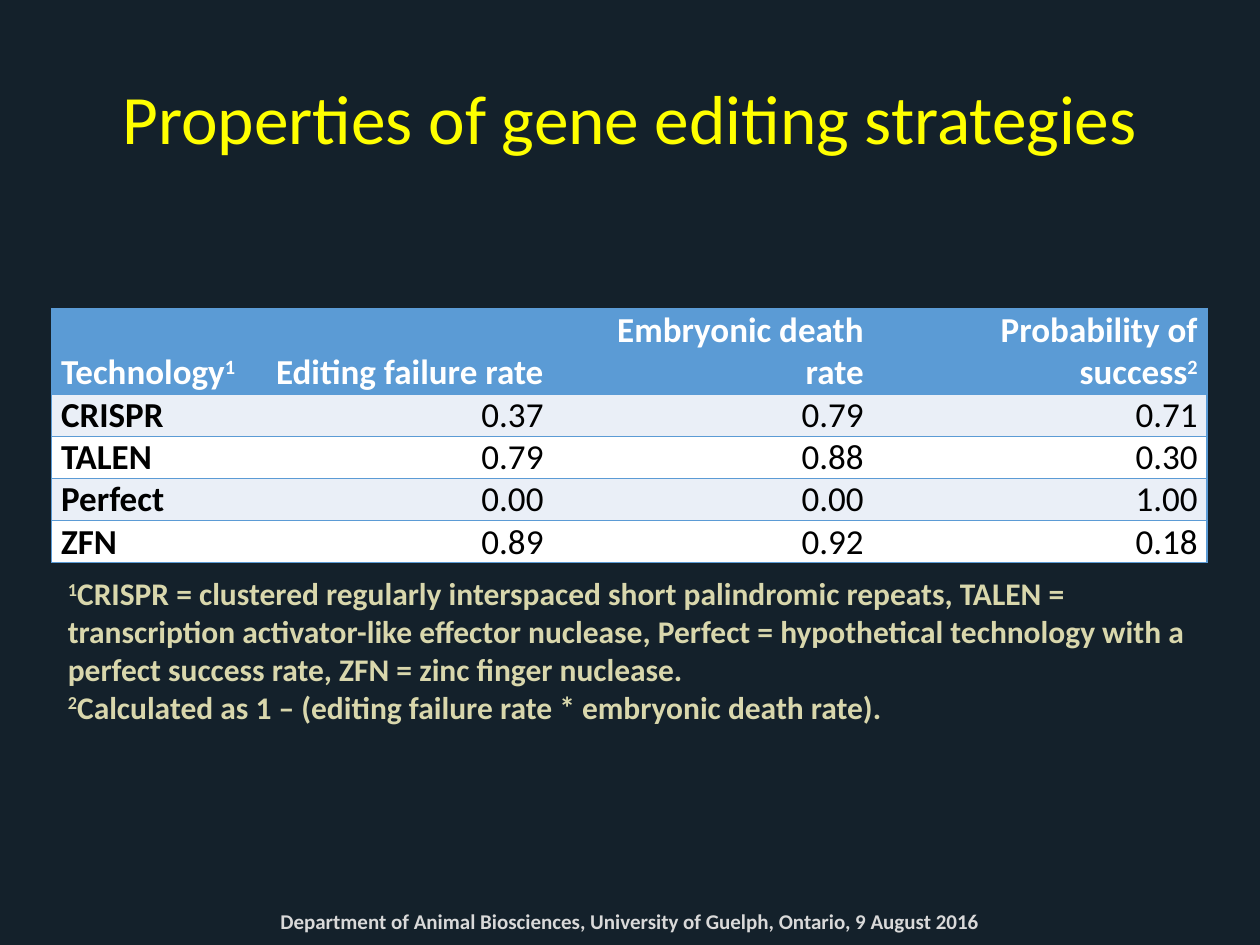
from dataclasses import dataclass

from lxml import etree
from pptx import Presentation, util as u
from pptx.dml import color
from pptx.enum import text
from pptx.oxml import ns

COLORS = {
    "background": "14212B", "title": "FFFF00", "footer": "D9D9D9", "note": "D9D7AC",
    "header": "5B9BD5", "band": "EAEFF7", "white": "FFFFFF", "black": "000000",
}
FONT = "Calibri"
NO_STYLE = "{2D5ABB26-0587-4C30-8999-92F81FD0307C}"
LEFT, CENTER, RIGHT = text.PP_ALIGN.LEFT, text.PP_ALIGN.CENTER, text.PP_ALIGN.RIGHT
TOP, MIDDLE, BOTTOM = text.MSO_ANCHOR.TOP, text.MSO_ANCHOR.MIDDLE, text.MSO_ANCHOR.BOTTOM


@dataclass
class TextBlock:
    """A text box: place and size in points, its words and their format."""
    left: float
    top: float
    width: float
    height: float
    words: str
    size: float
    color: str
    bold: bool = True
    align: text.PP_ALIGN = LEFT
    anchor: text.MSO_ANCHOR = TOP


# A part between carets is superscript
BLOCKS = [
    TextBlock(36, 21.6, 648, 90, "Properties of gene editing strategies",
              39.6, "title", bold=False, align=CENTER, anchor=MIDDLE),
    TextBlock(36, 508.3, 648, 28.8,
              "Department of Animal Biosciences, University of Guelph, Ontario, 9 August 2016",
              12, "footer", align=CENTER, anchor=BOTTOM),
    TextBlock(31.7, 324.7, 657.4, 94.3,
              "^1^CRISPR = clustered regularly interspaced short palindromic repeats, "
              "TALEN = transcription activator-like effector nuclease, Perfect = hypothetical "
              "technology with a perfect success rate, ZFN = zinc finger nuclease.\n"
              "^2^Calculated as 1 – (editing failure rate * embryonic death rate).",
              18, "note"),
]

COLUMN_WIDTHS = [118, 168.5, 183, 190.8]
HEADER_HEIGHT, ROW_HEIGHT = 49, 24
ROWS = [
    ["Technology^1^", "Editing failure rate", "Embryonic death rate", "Probability of success^2^"],
    ["CRISPR", "0.37", "0.79", "0.71"],
    ["TALEN", "0.79", "0.88", "0.30"],
    ["Perfect", "0.00", "0.00", "1.00"],
    ["ZFN", "0.89", "0.92", "0.18"],
]


def rgb(name: str) -> color.RGBColor:
    return color.RGBColor.from_string(COLORS[name])


def write_text(frame, words: str, *, size: float, ink: str, bold: bool, align) -> None:
    for index, line in enumerate(words.split("\n")):
        para = frame.add_paragraph() if index else frame.paragraphs[0]
        para.alignment = align
        for part, piece in enumerate(line.split("^")):
            if not piece:
                continue
            span = para.add_run()
            span.text = piece
            span.font.name, span.font.size, span.font.bold = FONT, u.Pt(size), bold
            span.font.color.rgb = rgb(ink)
            if part % 2:
                span.font._element.set("baseline", "30000")


def add_block(page, block: TextBlock) -> None:
    box = page.shapes.add_textbox(
        *map(u.Pt, (block.left, block.top, block.width, block.height)))
    frame = box.text_frame
    frame.word_wrap = True
    frame.vertical_anchor = block.anchor
    write_text(frame, block.words, size=block.size, ink=block.color,
               bold=block.bold, align=block.align)


def add_borders(cell, sides: list[str]) -> None:
    properties = cell._tc.get_or_add_tcPr()
    for position, side in enumerate(sides):
        line = etree.Element(ns.qn(f"a:ln{side}"), w=str(u.Pt(1)))
        fill = etree.SubElement(line, ns.qn("a:solidFill"))
        etree.SubElement(fill, ns.qn("a:srgbClr"), val=COLORS["header"])
        properties.insert(position, line)


def add_strategy_table(page, left: float, top: float) -> None:
    heights = [HEADER_HEIGHT] + [ROW_HEIGHT] * (len(ROWS) - 1)
    holder = page.shapes.add_table(
        len(ROWS), len(COLUMN_WIDTHS),
        *map(u.Pt, (left, top, sum(COLUMN_WIDTHS), sum(heights))))
    table = holder.table
    table._tbl.tblPr.find(ns.qn("a:tableStyleId")).text = NO_STYLE
    for column, width in zip(table.columns, COLUMN_WIDTHS):
        column.width = u.Pt(width)
    last = len(COLUMN_WIDTHS) - 1
    for r, (row, height) in enumerate(zip(ROWS, heights)):
        table.rows[r].height = u.Pt(height)
        is_header = r == 0
        for c, words in enumerate(row):
            cell = table.cell(r, c)
            cell.margin_left = cell.margin_right = u.Pt(5.4)
            cell.margin_top = cell.margin_bottom = 0
            cell.vertical_anchor = BOTTOM if is_header else TOP
            cell.fill.solid()
            cell.fill.fore_color.rgb = rgb("header" if is_header else "band" if r % 2 else "white")
            write_text(cell.text_frame, words, size=20, ink="white" if is_header else "black",
                       bold=is_header or c == 0, align=RIGHT if c else LEFT)
            # Rules between rows, and the outer frame
            add_borders(cell, ["L"] * (c == 0) + ["R"] * (c == last) + ["T", "B"])


def main() -> None:
    deck = Presentation()
    deck.slide_width, deck.slide_height = u.Pt(720), u.Pt(540)
    page = deck.slides.add_slide(deck.slide_layouts[6])
    page.background.fill.solid()
    page.background.fill.fore_color.rgb = rgb("background")

    # Title, footer and table notes
    for block in BLOCKS:
        add_block(page, block)

    # Comparison of the technologies
    add_strategy_table(page, 29.5, 176.4)
    deck.save("out.pptx")


if __name__ == "__main__":
    main()
